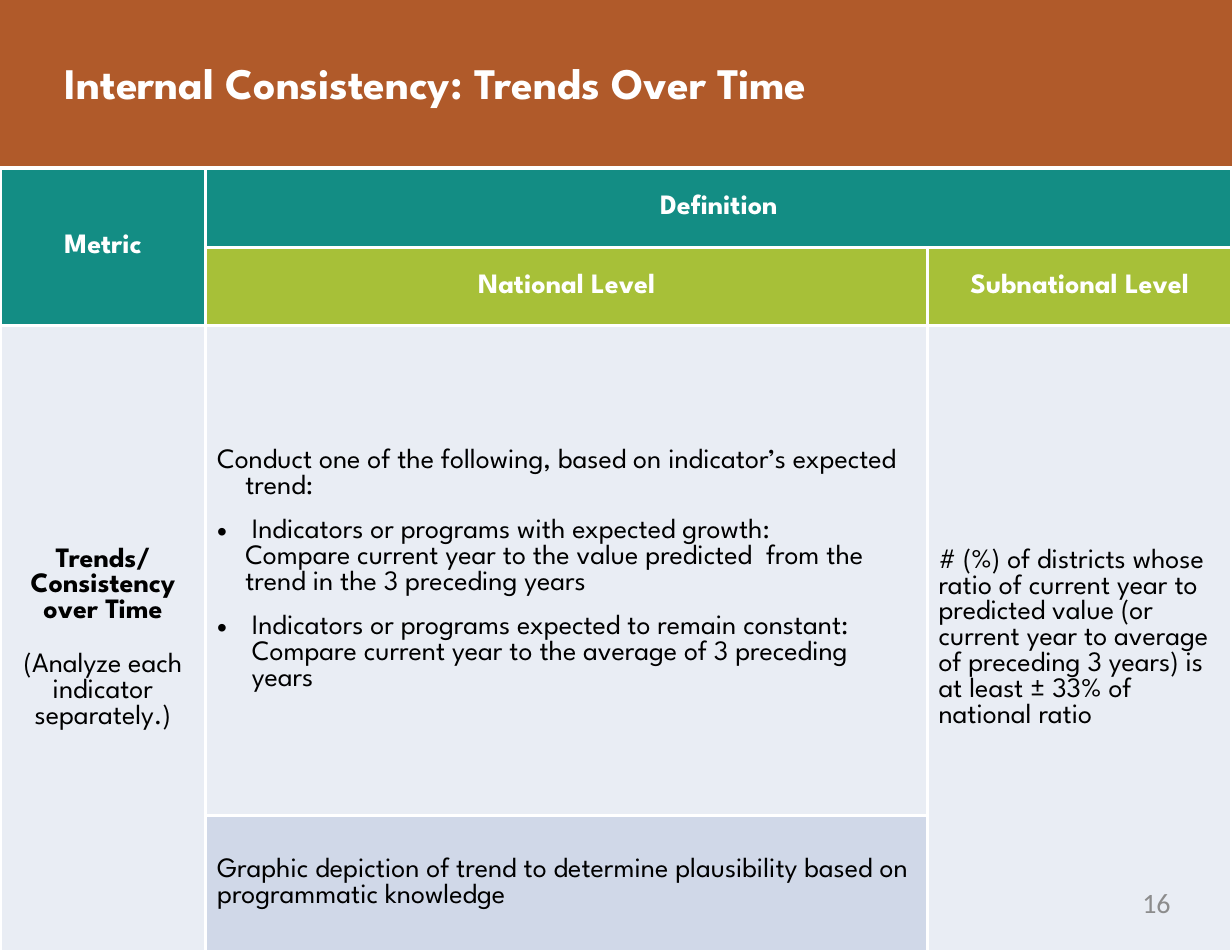
from dataclasses import dataclass

from lxml.etree import SubElement
from pptx import Presentation
from pptx.dml.color import RGBColor
from pptx.enum.shapes import MSO_SHAPE as Shape
from pptx.enum.text import MSO_ANCHOR as Anchor, MSO_AUTO_SIZE as AutoSize, PP_ALIGN as Align
from pptx.oxml import parse_xml
from pptx.oxml.ns import nsdecls, qn
from pptx.util import Cm, Pt

COLORS = {
    "band": "B05A2A", "teal": "138D84", "green": "A7C038",
    "pale": "E9EDF4", "blue": "D0D8E8",
    "white": "FFFFFF", "black": "000000", "gray": "8C8C8C",
}
HEADING_FONT = "League Spartan"
SLIDE_WIDTH, SLIDE_HEIGHT = 27.94, 21.59
TABLE_TOP = 3.81
COLUMN_WIDTHS = (4.67, 16.36, 6.91)
ROW_HEIGHTS = (1.8, 1.78, 11.1, 3.1)


@dataclass(frozen=True)
class Line:
    text: str
    bold: bool = False
    align: Align = Align.LEFT
    margin: float = 0
    indent: float = 0
    after: float = 0
    bullet: bool = False


@dataclass(frozen=True)
class Block:
    """A table cell with the last row and column it spans."""
    row: int
    column: int
    last_row: int
    last_column: int
    fill: str
    color: str
    lines: tuple[Line, ...]


def header(text: str) -> tuple[Line, ...]:
    return (Line(text, bold=True, align=Align.CENTER),)


def bullet(text: str) -> Line:
    return Line(text, margin=0.79, indent=-0.79, bullet=True)


BLOCKS = (
    Block(0, 0, 1, 0, "teal", "white", header("Metric")),
    Block(0, 1, 0, 2, "teal", "white", header("Definition")),
    Block(1, 1, 1, 1, "green", "white", header("National Level")),
    Block(1, 2, 1, 2, "green", "white", header("Subnational Level")),
    Block(2, 0, 3, 0, "pale", "black", (
        Line("Trends/ Consistency over Time", bold=True, align=Align.CENTER, after=18),
        Line("(Analyze each indicator separately.)", align=Align.CENTER),
    )),
    Block(2, 1, 2, 1, "pale", "black", (
        Line("Conduct one of the following, based on indicator’s expected trend:",
             margin=0.64, indent=-0.64, after=12),
        bullet("Indicators or programs with expected growth:"),
        Line("Compare current year to the value predicted  from the trend "
             "in the 3 preceding years", margin=0.64, after=12),
        bullet("Indicators or programs expected to remain constant:  "
               "Compare current year to the average of 3 preceding years"),
    )),
    Block(2, 2, 3, 2, "pale", "black", (
        Line("# (%) of districts whose ratio of current year to predicted value "
             "(or current year to average of preceding 3 years) is at least ± 33% "
             "of national ratio"),
    )),
    Block(3, 1, 3, 1, "blue", "black", (
        Line("Graphic depiction of trend to determine plausibility based on "
             "programmatic knowledge"),
    )),
)


def rgb(name: str) -> RGBColor:
    return RGBColor.from_string(COLORS[name])


def add_run(paragraph, text: str, size: float, color: str,
            font: str = HEADING_FONT, bold: bool = False) -> None:
    run = paragraph.add_run()
    run.text = text
    run.font.size = Pt(size)
    run.font.name = font
    run.font.bold = bold
    run.font.color.rgb = rgb(color)


def add_line(paragraph, line: Line, color: str) -> None:
    paragraph.alignment = line.align
    paragraph.space_after = Pt(line.after)
    properties = paragraph._p.get_or_add_pPr()
    properties.set("marL", str(Cm(line.margin)))
    properties.set("indent", str(Cm(line.indent)))
    if line.bullet:
        SubElement(properties, qn("a:buFont")).set("typeface", "Arial")
        SubElement(properties, qn("a:buChar")).set("char", "•")
    add_run(paragraph, line.text, 18, color, bold=line.bold)


def style_cell(cell, fill: str) -> None:
    """Fill the cell and give it white borders."""
    cell.fill.solid()
    cell.fill.fore_color.rgb = rgb(fill)
    properties = cell._tc.get_or_add_tcPr()
    for position, side in enumerate(("lnL", "lnR", "lnT", "lnB")):
        properties.insert(position, parse_xml(
            f'<a:{side} {nsdecls("a")} w="{Pt(2.25)}"><a:solidFill>'
            f'<a:srgbClr val="{COLORS["white"]}"/></a:solidFill></a:{side}>'))


def fill_block(table, block: Block) -> None:
    for row in range(block.row, block.last_row + 1):
        for column in range(block.column, block.last_column + 1):
            style_cell(table.cell(row, column), block.fill)
    cell = table.cell(block.row, block.column)
    last = table.cell(block.last_row, block.last_column)
    if (block.row, block.column) != (block.last_row, block.last_column):
        cell.merge(last)
    cell.vertical_anchor = Anchor.MIDDLE
    frame = cell.text_frame
    for number, line in enumerate(block.lines):
        paragraph = frame.add_paragraph() if number else frame.paragraphs[0]
        add_line(paragraph, line, block.color)


def add_band(slide) -> None:
    band = slide.shapes.add_shape(Shape.RECTANGLE, 0, 0, Cm(SLIDE_WIDTH), Cm(3.86))
    band.shadow.inherit = False
    band.fill.solid()
    band.fill.fore_color.rgb = rgb("band")
    band.line.fill.background()
    slide.shapes._spTree.insert(2, band._element)  # behind the title


def add_definition_table(slide) -> None:
    table = slide.shapes.add_table(
        len(ROW_HEIGHTS), len(COLUMN_WIDTHS), 0, Cm(TABLE_TOP),
        Cm(SLIDE_WIDTH), Cm(sum(ROW_HEIGHTS))).table
    for column, width in zip(table.columns, COLUMN_WIDTHS):
        column.width = Cm(width)
    for row, height in zip(table.rows, ROW_HEIGHTS):
        row.height = Cm(height)
    for block in BLOCKS:
        fill_block(table, block)


def clear_frame(shape):
    """Return the text frame without margins, anchored at the top."""
    frame = shape.text_frame
    frame.margin_left = frame.margin_right = frame.margin_top = frame.margin_bottom = 0
    frame.vertical_anchor = Anchor.TOP
    frame.auto_size = AutoSize.NONE
    frame.word_wrap = True
    return frame


def main() -> None:
    presentation = Presentation()
    presentation.slide_width, presentation.slide_height = Cm(SLIDE_WIDTH), Cm(SLIDE_HEIGHT)
    slide = presentation.slides.add_slide(presentation.slide_layouts[5])
    add_band(slide)

    title = slide.shapes.title
    title.left, title.top, title.width, title.height = Cm(1.47), Cm(1.27), Cm(26.4), Cm(1.19)
    heading = clear_frame(title).paragraphs[0]
    heading.alignment = Align.LEFT
    add_run(heading, "Internal Consistency: Trends Over Time", 28, "white", bold=True)

    add_definition_table(slide)

    number_box = slide.shapes.add_textbox(Cm(20.12), Cm(20.09), Cm(6.43), Cm(1.07))
    number = clear_frame(number_box).paragraphs[0]
    number.alignment = Align.RIGHT
    add_run(number, "16", 18, "gray", font="Calibri")

    presentation.save("out.pptx")


if __name__ == "__main__":
    main()
